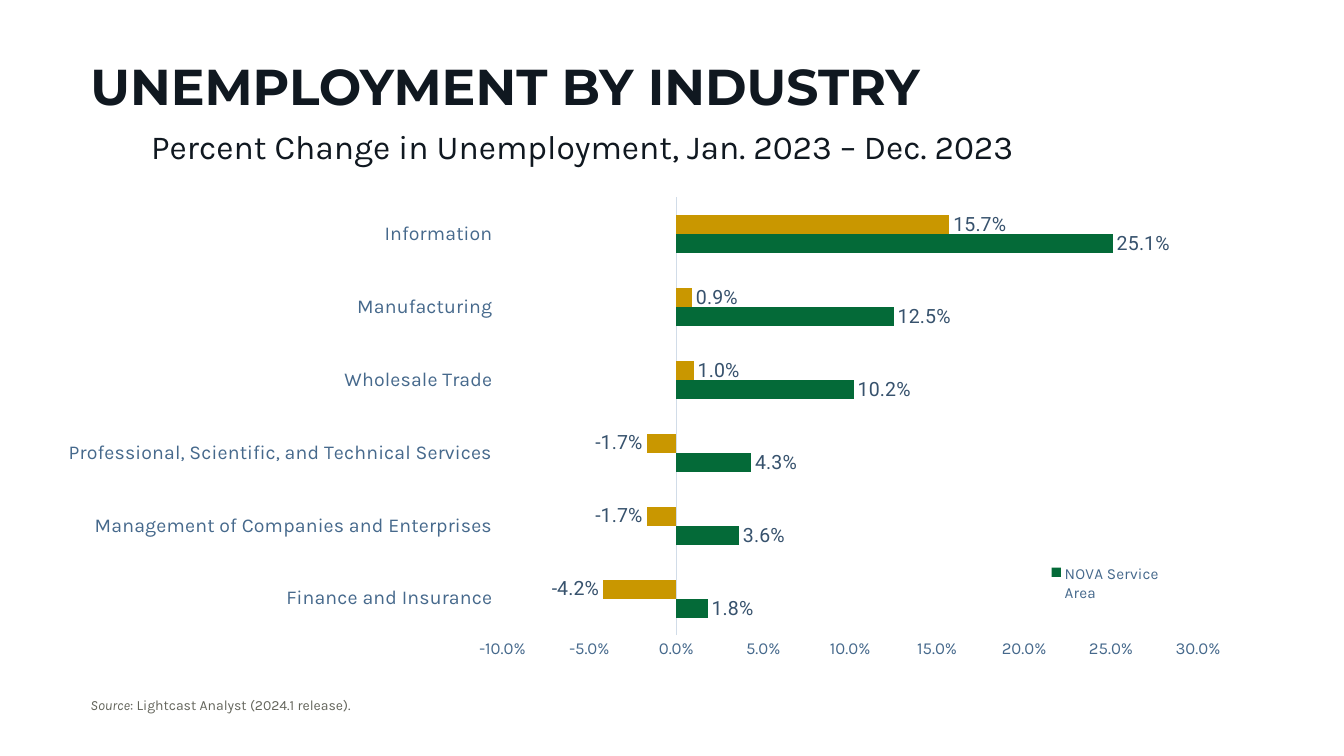
from lxml import etree
from pptx import Presentation
from pptx import util as u
from pptx.chart.data import CategoryChartData
from pptx.dml.color import RGBColor
from pptx.enum import chart as charts, text
from pptx.oxml.ns import qn

COLORS = {
    "ink": "101820", "source": "64655C", "axis": "46698C", "label": "37526D",
    "line": "D1DCE8", "green": "046A38", "gold": "C99700",
}
PERCENT = "0.0%"


def color(name):
    return RGBColor.from_string(COLORS[name])


class SlideBuilder:
    """Holds the slide and the house style."""

    body_font = "Karla"

    def __init__(self, slide):
        self.slide = slide

    def style(self, font, size, tone, name=body_font, bold=False):
        font.name, font.size, font.bold = name, u.Pt(size), bold
        font.color.rgb = color(tone)

    def text_box(self, box, runs, size, tone, name=body_font, bold=False,
                 anchor=text.MSO_ANCHOR.TOP):
        """Add one paragraph; runs are (wording, italic) pairs."""
        frame = self.slide.shapes.add_textbox(*map(u.Cm, box)).text_frame
        frame.word_wrap = True
        frame.vertical_anchor = anchor
        paragraph = frame.paragraphs[0]
        self.style(paragraph.font, size, tone, name, bold)
        for wording, italic in runs:
            run = paragraph.add_run()
            run.text = wording
            if italic:
                run.font.italic = True

    def layout(self, parent, position, target, **fractions):
        """Place a chart part by fractions of the chart's size."""
        for old in parent.findall(qn("c:layout")):
            parent.remove(old)
        layout = etree.Element(qn("c:layout"))
        manual = etree.SubElement(layout, qn("c:manualLayout"))
        settings = {"layoutTarget": target, "xMode": "edge", "yMode": "edge", **fractions}
        for tag, value in settings.items():
            if value is not None:
                etree.SubElement(manual, qn(f"c:{tag}")).set("val", str(value))
        parent.insert(position, layout)

    def bar_chart(self, box, categories, series):
        """Add clustered bars; series are (name, colour, values) rows."""
        data = CategoryChartData(number_format=PERCENT)
        data.categories = categories
        for name, _, values in series:
            data.add_series(name, values)
        chart = self.slide.shapes.add_chart(
            charts.XL_CHART_TYPE.BAR_CLUSTERED, *map(u.Cm, box), data).chart
        self.style(chart.font, 10, "ink", "Cambria")
        chart.has_title = False

        # Bars and value labels
        plot = chart.plots[0]
        plot.gap_width, plot.overlap, plot.vary_by_categories = 182, 0, False
        for bars, (_, tone, _) in zip(plot.series, series):
            bars.invert_if_negative = False
            bars.format.fill.solid()
            bars.format.fill.fore_color.rgb = color(tone)
            labels = bars.data_labels
            labels.show_value = True
            labels.number_format, labels.number_format_is_linked = PERCENT, False
            labels.position = charts.XL_LABEL_POSITION.OUTSIDE_END
            self.style(labels.font, 14, "label", "Roboto")

        # Axes
        for axis, size in ((chart.category_axis, 14), (chart.value_axis, 12)):
            axis.has_major_gridlines = False
            axis.major_tick_mark = axis.minor_tick_mark = charts.XL_TICK_MARK.NONE
            self.style(axis.tick_labels.font, size, "axis")
        chart.category_axis.tick_label_position = charts.XL_TICK_LABEL_POSITION.LOW
        line = chart.category_axis.format.line
        line.color.rgb, line.width = color("line"), u.Pt(0.75)
        values = chart.value_axis
        values.minimum_scale, values.maximum_scale, values.major_unit = -0.1, 0.3, 0.05
        values.format.line.fill.background()
        values.tick_labels.number_format = PERCENT
        values.tick_labels.number_format_is_linked = False
        return chart

    def legend(self, chart, hidden, **fractions):
        """Add a legend without the entry at index hidden."""
        chart.has_legend = True
        legend = chart.legend
        legend.position = charts.XL_LEGEND_POSITION.RIGHT
        legend.include_in_layout = False
        self.style(legend.font, 11, "axis")
        element = legend._element
        entry = etree.Element(qn("c:legendEntry"))
        etree.SubElement(entry, qn("c:idx")).set("val", str(hidden))
        etree.SubElement(entry, qn("c:delete")).set("val", "1")
        element.insert(1, entry)
        self.layout(element, 2, None, **fractions)


def main():
    presentation = Presentation()
    presentation.slide_width, presentation.slide_height = u.Cm(33.87), u.Cm(19.05)
    builder = SlideBuilder(presentation.slides.add_slide(presentation.slide_layouts[6]))

    # Headings
    bottom = text.MSO_ANCHOR.BOTTOM
    builder.text_box((2.03, 1.27, 26.92, 1.78), [("UNEMPLOYMENT BY INDUSTRY", False)],
                     36, "ink", "Montserrat", True, bottom)
    builder.text_box((3.56, 3.05, 26.92, 1.27),
                     [("Percent Change in Unemployment, Jan. 2023 – Dec. 2023", False)],
                     24, "ink", anchor=bottom)

    # Source line
    builder.text_box((2.03, 17.42, 17.73, 0.69),
                     [("Source", True), (": Lightcast Analyst (2024.1 release).", False)],
                     10, "source")

    # Chart
    chart = builder.bar_chart(
        (1.73, 4.6, 29.34, 12.4),
        ["Finance and Insurance", "Management of Companies and Enterprises",
         "Professional, Scientific, and Technical Services", "Wholesale Trade",
         "Manufacturing", "Information"],
        [("NOVA Service Area", "green", (0.018, 0.036, 0.043, 0.102, 0.125, 0.251)),
         ("Alexandria/Arlington", "gold", (-0.042, -0.017, -0.017, 0.01, 0.009, 0.157))])
    plot_area = chart._chartSpace.chart.plotArea
    builder.layout(plot_area, 0, "inner", x=0.37, y=0.03, w=0.6, h=0.89)
    builder.legend(chart, hidden=0, x=0.83, y=0.77, w=0.12, h=0.09)

    presentation.save("out.pptx")


if __name__ == "__main__":
    main()
